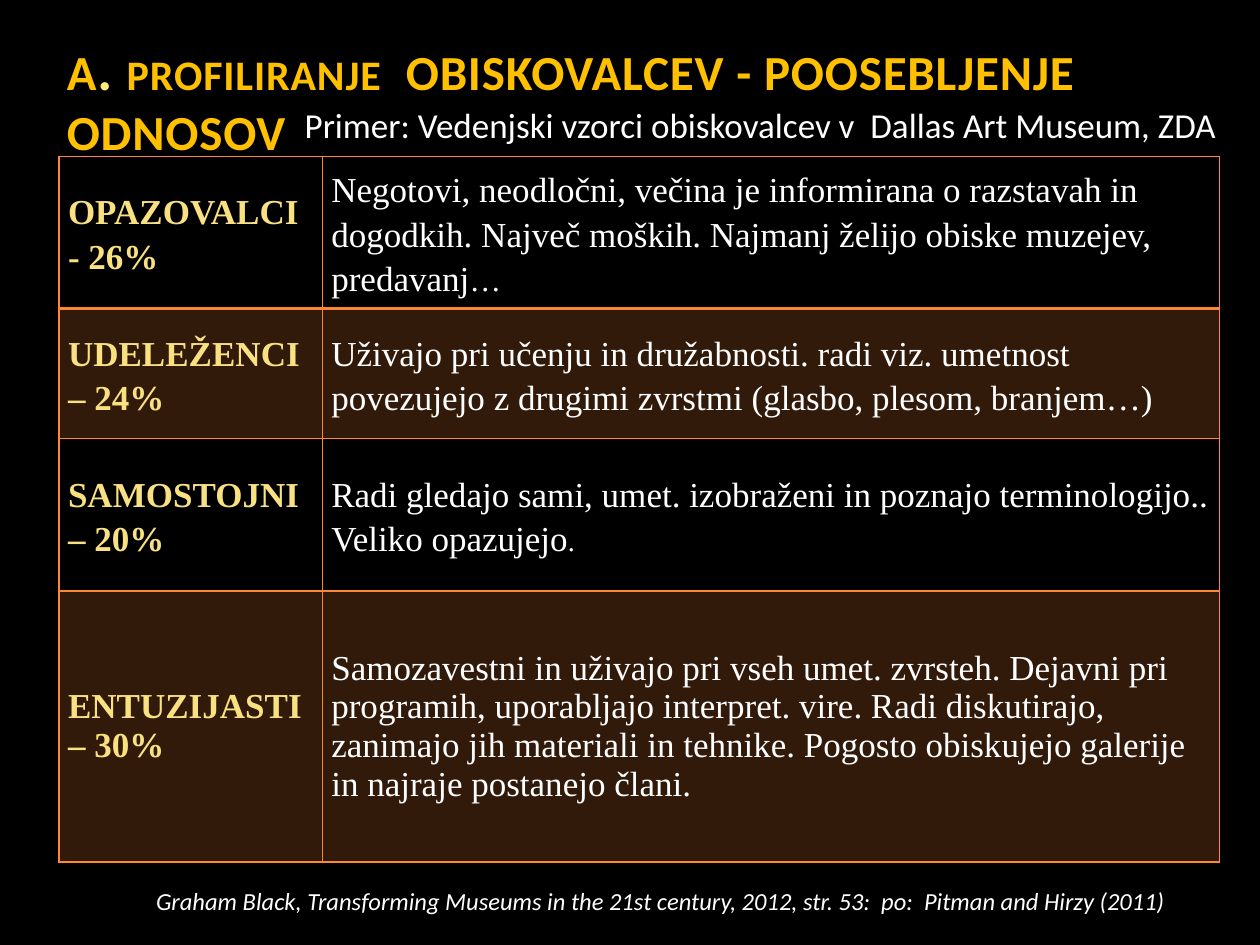
from lxml.etree import SubElement
from pptx import Presentation
from pptx.dml.color import RGBColor
from pptx.enum.text import MSO_ANCHOR as Anchor, MSO_AUTO_SIZE as AutoSize, PP_ALIGN as Align
from pptx.oxml.ns import qn
from pptx.util import Inches, Pt

ORANGE, GOLD, WHITE = "FE8637", "FFC000", "FFFFFF"
LABEL, SERIF, SANS = "F9E181", "Times New Roman", "Calibri"
COLUMN_WIDTHS = (2.09, 7.12)
VISITOR_TYPES = [
    (1.21, 1.15, "OPAZOVALCI - 26%",
     [("Negotovi, neodločni, večina je informirana o razstavah in dogodkih. "
       "Največ moških. Najmanj želijo obiske muzejev, predavanj", 20), ("…", 18)]),
    (1.03, 1.15, "UDELEŽENCI – 24%",
     [("Uživajo pri učenju in družabnosti. radi viz. umetnost povezujejo "
       "z drugimi zvrstmi (glasbo, plesom, branjem…)", 20)]),
    (1.21, 1.15, "SAMOSTOJNI – 20%",
     [("Radi gledajo sami, umet. izobraženi in poznajo terminologijo.. "
       "Veliko opazujejo", 20), (".", 16)]),
    (2.15, 1.0, "ENTUZIJASTI – 30%",
     [("Samozavestni in uživajo pri vseh umet. zvrsteh. Dejavni pri programih, "
       "uporabljajo interpret. vire. Radi diskutirajo, zanimajo jih materiali in "
       "tehnike. Pogosto obiskujejo galerije in najraje postanejo člani.", 20)]),
]


def rgb(code):
    """Turn a hex string into a colour."""
    return RGBColor.from_string(code)


def add_run(paragraph, text, size, color, face, bold=False, italic=False):
    """Append a formatted run and return it."""
    run = paragraph.add_run()
    run.text = text
    font = run.font
    font.name, font.size, font.bold, font.italic = face, Pt(size), bold, italic
    font.color.rgb = rgb(color)
    return run


def add_title(slide):
    """Fill and place the title placeholder."""
    title = slide.shapes.title
    title.left, title.top = Inches(0.43), Inches(0.22)
    title.width, title.height = Inches(9.29), Inches(1.06)
    frame = title.text_frame
    frame.word_wrap, frame.auto_size = True, AutoSize.NONE
    frame.vertical_anchor = Anchor.TOP
    heading = frame.paragraphs[0]
    heading.alignment = Align.LEFT
    for text, size, color in (
        ("A", 28, GOLD), (". ", 32, "FFEE74"), ("PROFILIRANJE", 24, GOLD),
        ("  OBISKOVALCEV - POOSEBLJENJE ODNOSOV", 28, GOLD),
    ):
        run = add_run(heading, text, size, color, SANS, bold=True)
        run.font._element.set("spc", "50")


def add_caption(slide, place, text, size, wrap=True, italic=False, anchor=Anchor.TOP):
    """Add a single-paragraph text box."""
    frame = slide.shapes.add_textbox(*map(Inches, place)).text_frame
    frame.word_wrap, frame.vertical_anchor = wrap, anchor
    frame.auto_size = AutoSize.SHAPE_TO_FIT_TEXT
    add_run(frame.paragraphs[0], text, size, WHITE, SANS, italic=italic)


def set_borders(cell, bottom_width):
    """Draw orange lines on the four sides of a cell."""
    properties = cell._tc.get_or_add_tcPr()
    for side, width in (("L", 1), ("R", 1), ("T", 1), ("B", bottom_width)):
        line = SubElement(properties, qn(f"a:ln{side}"), w=str(Pt(width)))
        fill = SubElement(line, qn("a:solidFill"))
        SubElement(fill, qn("a:srgbClr"), val=ORANGE)


def set_band(cell, tinted):
    """Give a cell a translucent orange fill or none."""
    if not tinted:
        cell.fill.background()
        return
    cell.fill.solid()
    cell.fill.fore_color.rgb = rgb(ORANGE)
    color = cell._tc.tcPr.find(qn("a:solidFill")).find(qn("a:srgbClr"))
    SubElement(color, qn("a:alpha"), val="20000")


def fill_cell(cell, runs, spacing, color, bold):
    """Write runs of text into a cell."""
    cell.margin_left = cell.margin_right = Inches(0.07)
    cell.margin_top = cell.margin_bottom = 0
    cell.vertical_anchor = Anchor.MIDDLE
    paragraph = cell.text_frame.paragraphs[0]
    paragraph.line_spacing = spacing
    for text, size in runs:
        add_run(paragraph, text, size, color, SERIF, bold)


def add_visitor_table(slide):
    """Add the table of visitor types."""
    table = slide.shapes.add_table(
        len(VISITOR_TYPES), len(COLUMN_WIDTHS), Inches(0.47), Inches(1.24),
        Inches(sum(COLUMN_WIDTHS)), Inches(sum(row[0] for row in VISITOR_TYPES)),
    ).table
    table.first_row = table.horz_banding = False
    for column, width in zip(table.columns, COLUMN_WIDTHS):
        column.width = Inches(width)
    for index, (height, spacing, label, traits) in enumerate(VISITOR_TYPES):
        row = table.rows[index]
        row.height = Inches(height)
        for cell in row.cells:
            set_borders(cell, 2 if index == 0 else 1)
            set_band(cell, index % 2 == 1)
        fill_cell(row.cells[0], [(label, 20)], spacing, LABEL, True)
        fill_cell(row.cells[1], traits, spacing, WHITE, False)


def main():
    """Build and save the slide."""
    deck = Presentation()
    deck.slide_width, deck.slide_height = Inches(10), Inches(7.5)
    slide = deck.slides.add_slide(deck.slide_layouts[5])
    slide.background.fill.solid()
    slide.background.fill.fore_color.rgb = rgb("000000")
    add_title(slide)
    add_visitor_table(slide)
    add_caption(slide, (2.32, 0.77, 7.57, 0.44),
                "Primer: Vedenjski vzorci obiskovalcev v  Dallas Art Museum, ZDA",
                20, wrap=False, anchor=Anchor.MIDDLE)
    add_caption(slide, (1.14, 6.98, 8.54, 0.34),
                "Graham Black, Transforming Museums in the 21st century, 2012, "
                "str. 53:  po:  Pitman and Hirzy (2011)", 14, italic=True)
    deck.save("out.pptx")


if __name__ == "__main__":
    main()
